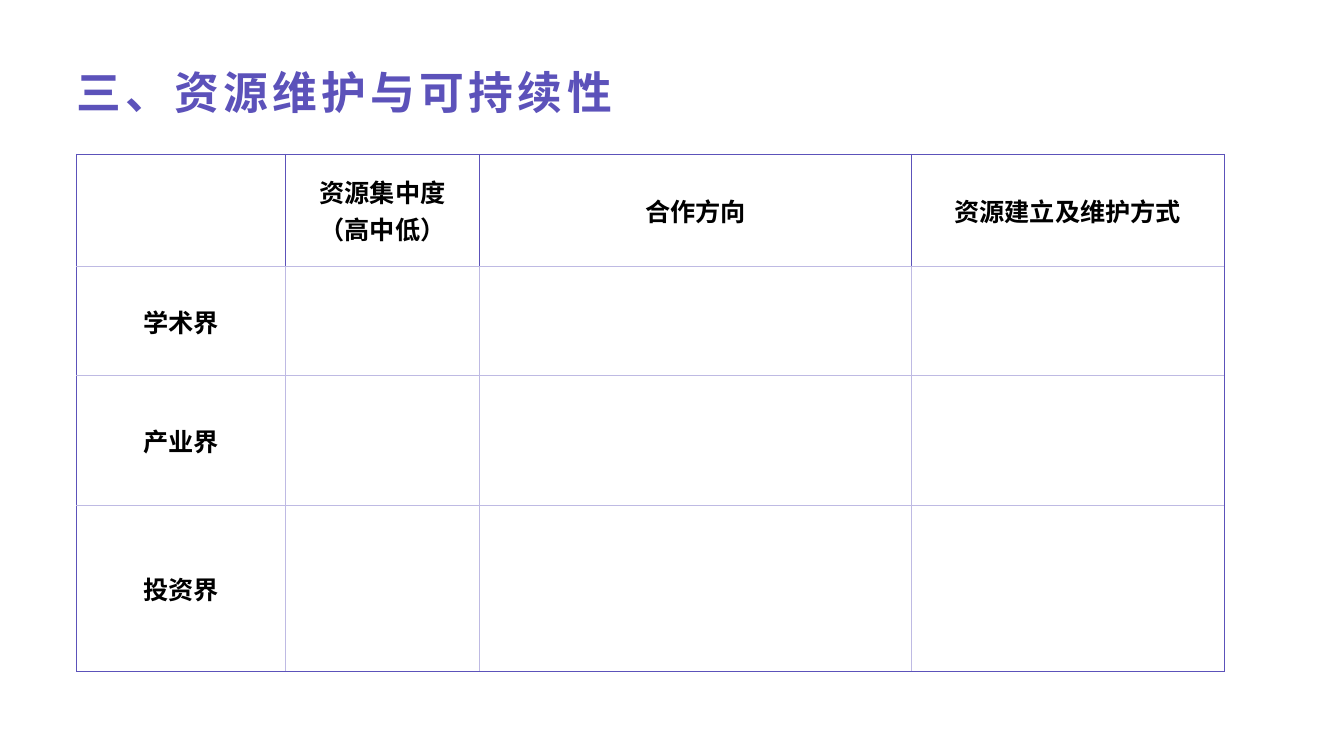
from typing import NamedTuple

from lxml import etree
from pptx import Presentation
from pptx.dml.color import RGBColor
from pptx.enum import text
from pptx.oxml import ns
from pptx.util import Inches, Pt

PURPLE = RGBColor(0x5C, 0x52, 0xBA)
LILAC = RGBColor(0xBE, 0xBA, 0xE3)
BLACK = RGBColor(0, 0, 0)
CHINESE_FONT = "Noto Sans CJK SC"
LEFT = Inches(0.76)


class Column(NamedTuple):
    heading: str
    width: float


class Row(NamedTuple):
    label: str
    height: float


COLUMNS = [
    Column("", 2.07),
    Column("资源集中度（高中低）", 1.93),
    Column("合作方向", 4.28),
    Column("资源建立及维护方式", 3.1),
]
HEADER_HEIGHT = 1.11
ROWS = [Row("学术界", 1.09), Row("产业界", 1.29), Row("投资界", 1.64)]


def format_run(run, latin_font: str, size: int, color: RGBColor) -> None:
    run.font.name = latin_font
    run.font.size = Pt(size)
    run.font.bold = True
    run.font.color.rgb = color
    east_asian = etree.SubElement(run.font._element, ns.qn("a:ea"))
    east_asian.set("typeface", CHINESE_FONT)


def set_borders(cell, colors: dict[str, RGBColor]) -> None:
    """Draw the cell's sides, given in schema order: L, R, T, B."""
    properties = cell._tc.get_or_add_tcPr()
    for position, (side, color) in enumerate(colors.items()):
        line = etree.Element(ns.qn(f"a:ln{side}"), w=str(Pt(0.75)))
        fill = etree.SubElement(line, ns.qn("a:solidFill"))
        etree.SubElement(fill, ns.qn("a:srgbClr"), val=str(color))
        properties.insert(position, line)


def add_title(slide, wording: str) -> None:
    title = slide.shapes.title
    title.left, title.top = LEFT, Inches(0.39)
    title.width, title.height = Inches(11.81), Inches(0.79)
    frame = title.text_frame
    frame.margin_left = frame.margin_right = 0
    frame.margin_top = frame.margin_bottom = 0
    frame.auto_size = text.MSO_AUTO_SIZE.NONE
    frame.vertical_anchor = text.MSO_ANCHOR.BOTTOM
    frame.text = wording
    paragraph = frame.paragraphs[0]
    paragraph.alignment = text.PP_ALIGN.LEFT
    run = paragraph.runs[0]
    format_run(run, CHINESE_FONT, 32, PURPLE)
    run.font._element.set("spc", "300")


def add_resource_table(slide) -> None:
    heights = [HEADER_HEIGHT] + [row.height for row in ROWS]
    width = sum(column.width for column in COLUMNS)
    table = slide.shapes.add_table(
        len(heights), len(COLUMNS), LEFT, Inches(1.53),
        Inches(width), Inches(sum(heights)),
    ).table
    table.first_row = table.horz_banding = False
    for table_column, column in zip(table.columns, COLUMNS):
        table_column.width = Inches(column.width)
    for table_row, height in zip(table.rows, heights):
        table_row.height = Inches(height)

    last_row, last_column = len(ROWS), len(COLUMNS) - 1
    for row_index in range(len(heights)):
        for column_index, column in enumerate(COLUMNS):
            cell = table.cell(row_index, column_index)
            cell.fill.background()
            cell.vertical_anchor = text.MSO_ANCHOR.MIDDLE
            is_header = row_index == 0
            outer = {
                "L": is_header or column_index == 0,
                "R": is_header or column_index == last_column,
                "T": is_header,
                "B": row_index == last_row,
            }
            set_borders(cell, {s: PURPLE if o else LILAC for s, o in outer.items()})

            if is_header:
                wording = column.heading
            else:
                wording = ROWS[row_index - 1].label if column_index == 0 else ""
            if wording:
                cell.text_frame.text = wording
                paragraph = cell.text_frame.paragraphs[0]
                paragraph.alignment = text.PP_ALIGN.CENTER
                format_run(paragraph.runs[0], "Arial", 18, BLACK)


def main() -> None:
    presentation = Presentation()
    presentation.slide_width = Inches(13.33)
    presentation.slide_height = Inches(7.5)
    slide = presentation.slides.add_slide(presentation.slide_layouts[5])
    add_title(slide, "三、资源维护与可持续性")
    add_resource_table(slide)
    presentation.save("out.pptx")


if __name__ == "__main__":
    main()
